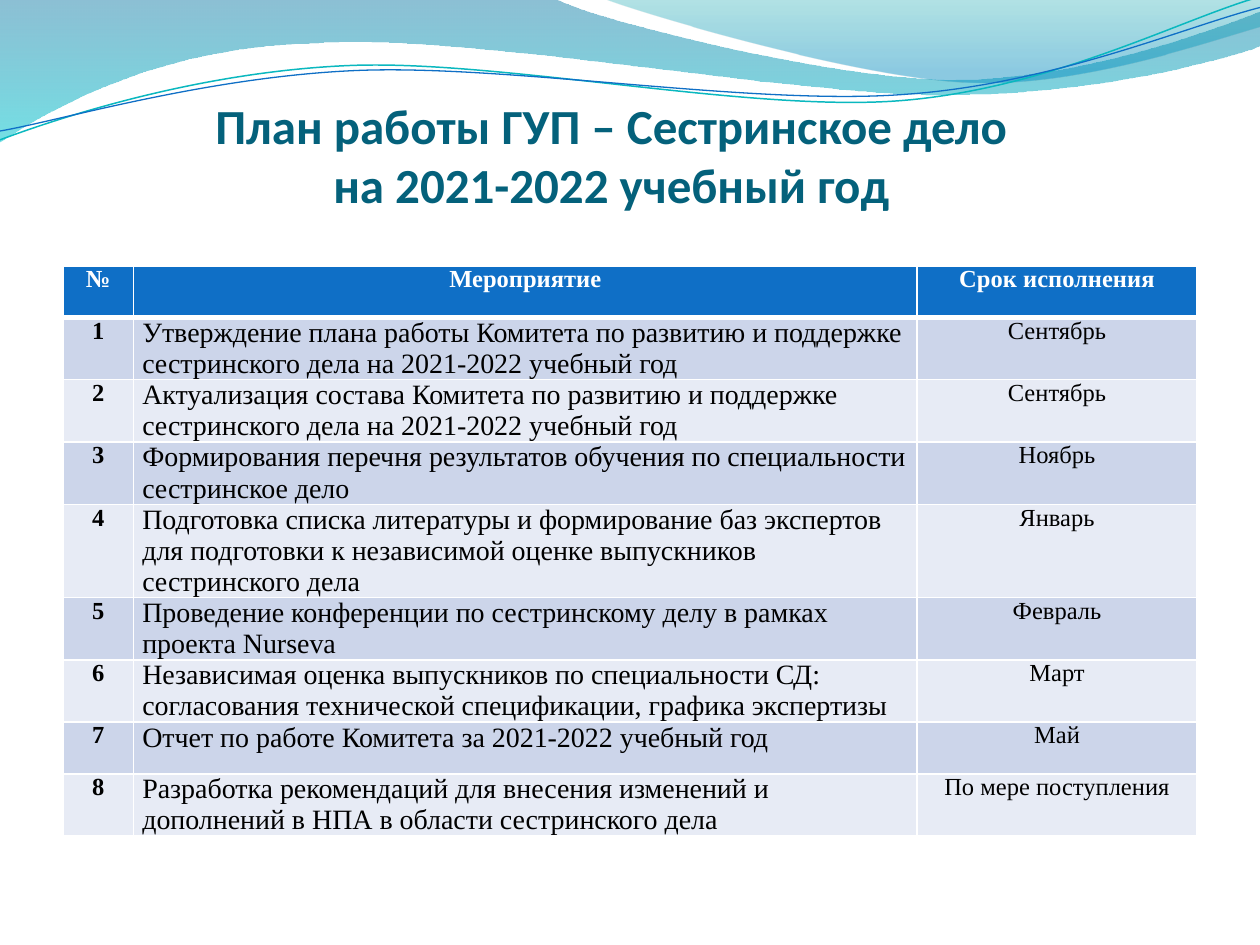
import math

import pptx
import pptx.util
import pptx.dml.color
import pptx.enum.text
import pptx.oxml
import pptx.oxml.ns
from pptx.util import Inches

# Content
TITLE = ["План работы ГУП – Сестринское дело", "на 2021-2022 учебный год"]
HEADER = ("№", "Мероприятие", "Срок исполнения")
EVENTS = [
    ("Утверждение плана работы Комитета по развитию и поддержке сестринского дела на 2021-2022 учебный год", "Сентябрь"),
    ("Актуализация состава Комитета по развитию и поддержке сестринского дела на 2021-2022 учебный год", "Сентябрь"),
    ("Формирования перечня результатов обучения по специальности сестринское дело", "Ноябрь"),
    ("Подготовка списка литературы и формирование баз экспертов для подготовки к независимой оценке выпускников сестринского дела", "Январь"),
    ("Проведение конференции по сестринскому делу в рамках проекта Nurseva", "Февраль"),
    ("Независимая оценка выпускников по специальности СД: согласования технической спецификации, графика экспертизы", "Март"),
    ("Отчет по работе Комитета за 2021-2022 учебный год", "Май"),
    ("Разработка рекомендаций для внесения изменений и дополнений в НПА в области сестринского дела", "По мере поступления"),
]
COLUMN_WIDTHS = (0.56, 6.22, 2.22)
ROW_HEIGHT = 0.41
BLUE, WHITE, BLACK = "0F6FC6", "FFFFFF", "000000"
BANDS = ("CCD5EA", "E7EBF5")

# Waves: a start point, then lines (2 numbers) and curves (6 numbers), in inches
# Gradient stops: position, colour, opacity in percent
WAVE_FILLS = [
    ([(0, 0), (4.4, -0.01), (4.76, 0.17, 6.64, 0.63, 7.58, 0.63),
      (8.53, 0.63, 9.58, 0.26, 10, 0.09), (10.01, 0.36),
      (9.83, 0.44, 8.7, 0.76, 7.46, 0.75), (6.22, 0.75, 3.82, 0.28, 2.57, 0.34),
      (1.29, 0.36, 0.46, 0.83, -0.01, 1.13), (0, 0)],
     [(0, "0074A1", 45), (1, "00C6CF", 55)]),
    ([(4.79, -0.01), (5.09, 0.11, 6.82, 0.62, 7.69, 0.65),
      (8.56, 0.69, 9.61, 0.32, 10, 0.21), (10, 0), (4.79, -0.01)],
     [(0, "00A1A9", 30), (0.8, "008BBF", 45)]),
]
# Lines: steps, centre of rotation, colour, width
WAVE_LINES = [
    ([(0, 1.11), (0.48, 0.93, 1.58, 0.57, 2.77, 0.52),
      (3.95, 0.47, 5.93, 0.89, 7.13, 0.8), (8.33, 0.71, 9.38, 0.15, 9.98, -0.02)],
     (4.99, 0.58), "0AB8BF", 0.85),
    ([(0, 1.04), (0.47, 0.96, 1.64, 0.61, 2.83, 0.56),
      (4.03, 0.51, 5.97, 0.84, 7.17, 0.75), (8.36, 0.67, 9.41, 0.21, 10, 0.06)],
     (5, 0.59), BLUE, 0.75),
]
LINE_TILT = -2.7


def rgb(value):
    return pptx.dml.color.RGBColor.from_string(value)


def write(frame, lines, *, font="Times New Roman", size=14, color=BLACK, bold=False, align="CENTER"):
    para = frame.paragraphs[0]
    para.alignment = getattr(pptx.enum.text.PP_ALIGN, align)
    for number, line in enumerate(lines):
        if number:
            para.add_line_break()
        span = para.add_run()
        span.text = line
        span.font.name = font
        span.font.size = pptx.util.Pt(size)
        span.font.bold = bold
        span.font.color.rgb = rgb(color)


def turn(point, center, degrees):
    angle = math.radians(degrees)
    dx, dy = point[0] - center[0], point[1] - center[1]
    return (center[0] + dx * math.cos(angle) - dy * math.sin(angle),
            center[1] + dx * math.sin(angle) + dy * math.cos(angle))


def add_wave(page, steps, closed, center=(0, 0), tilt=0):
    points = [turn(step[i:i + 2], center, -tilt) for step in steps for i in range(0, len(step), 2)]
    scaled = [(Inches(x), Inches(y)) for x, y in points]
    builder = page.shapes.build_freeform(*scaled[0])
    builder.add_line_segments(scaled[1:], close=closed)
    wave = builder.convert_to_shape()
    wave.shadow.inherit = False
    wave.rotation = tilt
    # Join the three points of each curve into one Bezier segment
    segments = iter(wave._element.findall(".//" + pptx.oxml.ns.qn("a:lnTo")))
    for step in steps[1:]:
        group = [next(segments) for _ in range(len(step) // 2)]
        if len(group) == 3:
            curve = pptx.oxml.parse_xml(f'<a:cubicBezTo {pptx.oxml.ns.nsdecls("a")}/>')
            group[0].addprevious(curve)
            for segment in group:
                curve.append(segment[0])
                segment.getparent().remove(segment)
    return wave


def set_gradient(shape, stops):
    shape.fill.gradient()
    shape.fill.gradient_angle = 270
    for stop, (position, color, opacity) in zip(shape.fill.gradient_stops, stops):
        stop.position = position
        stop.color.rgb = rgb(color)
    colors = shape._element.spPr.findall(".//" + pptx.oxml.ns.qn("a:srgbClr"))
    for element, (position, color, opacity) in zip(colors, stops):
        element.append(pptx.oxml.parse_xml(
            f'<a:alpha {pptx.oxml.ns.nsdecls("a")} val="{opacity * 1000}"/>'))


def set_borders(cell, widths):
    for side, width in zip("LRTB", widths):
        cell._tc.get_or_add_tcPr().append(pptx.oxml.parse_xml(
            f'<a:ln{side} {pptx.oxml.ns.nsdecls("a")} w="{width * 12700}">'
            f'<a:solidFill><a:srgbClr val="{WHITE}"/></a:solidFill></a:ln{side}>'))


def add_plan(page):
    rows = [HEADER] + [(str(number), *event) for number, event in enumerate(EVENTS, 1)]
    plan = page.shapes.add_table(len(rows), len(HEADER), Inches(0.5), Inches(2.11),
                                 Inches(sum(COLUMN_WIDTHS)), Inches(ROW_HEIGHT * len(rows))).table
    for column, width in zip(plan.columns, COLUMN_WIDTHS):
        column.width = Inches(width)
    for r, row in enumerate(rows):
        plan.rows[r].height = Inches(ROW_HEIGHT)
        for c, text in enumerate(row):
            cell = plan.cell(r, c)
            cell.margin_left = cell.margin_right = Inches(0.07)
            cell.margin_top = cell.margin_bottom = 0
            set_borders(cell, (1, 1, 3 if r == 1 else 1, 3 if r == 0 else 1))
            cell.fill.solid()
            cell.fill.fore_color.rgb = rgb(BANDS[(r - 1) % 2] if r else BLUE)
            event = r > 0 and c == 1
            write(cell.text_frame, [text], size=16 if event else 14,
                  color=BLACK if r else WHITE, bold=r == 0 or c == 0,
                  align="LEFT" if event else "CENTER")


def main():
    deck = pptx.Presentation()
    deck.slide_width, deck.slide_height = Inches(10), Inches(7.5)
    page = deck.slides.add_slide(deck.slide_layouts[5])

    # Waves along the top
    for steps, stops in WAVE_FILLS:
        wave = add_wave(page, steps, True)
        set_gradient(wave, stops)
        wave.line.fill.background()
    for steps, center, color, width in WAVE_LINES:
        wave = add_wave(page, steps, False, center, LINE_TILT)
        wave.fill.background()
        wave.line.color.rgb = rgb(color)
        wave.line.width = pptx.util.Pt(width)

    # Title, brought in front of the waves
    title = page.shapes.title
    page.shapes._spTree.append(title._element)
    title.left, title.top, title.width, title.height = map(Inches, (0.35, 0.99, 9, 0.7))
    frame = title.text_frame
    frame.auto_size = pptx.enum.text.MSO_AUTO_SIZE.NONE
    frame.word_wrap = True
    frame.vertical_anchor = pptx.enum.text.MSO_ANCHOR.BOTTOM
    frame.margin_left = frame.margin_right = frame.margin_bottom = 0
    frame.margin_top = Inches(0.05)
    write(frame, TITLE, font="Calibri", size=28, color="04617B", bold=True)

    # Plan of events
    add_plan(page)
    deck.save("out.pptx")


if __name__ == "__main__":
    main()
